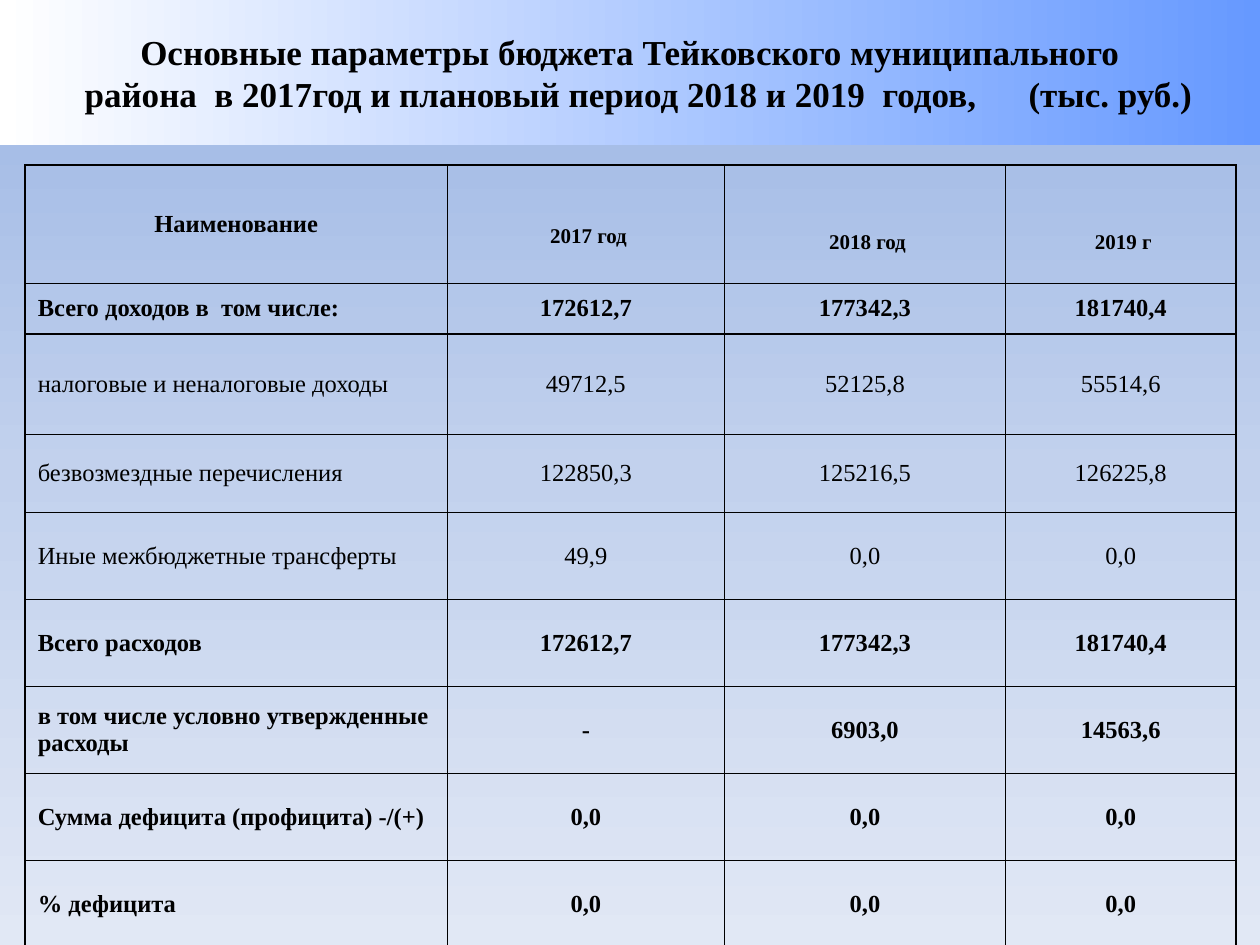
from dataclasses import dataclass

from lxml.etree import SubElement
from pptx import Presentation
from pptx.dml.color import RGBColor
from pptx.enum.shapes import MSO_SHAPE
from pptx.enum.text import MSO_ANCHOR, PP_ALIGN
from pptx.oxml import parse_xml
from pptx.oxml.ns import nsdecls, qn
from pptx.util import Inches, Pt


@dataclass(frozen=True)
class Theme:
    font: str = "Times New Roman"
    ink: str = "000000"
    page: tuple = ((0, "9AB5E4"), (50, "C2D1ED"), (100, "E1E8F5"))
    banner: tuple = ((0, "FFFFFF"), (100, "6699FF"))
    title: int = 20
    body: int = 14
    year: int = 12
    border: int = 1


THEME = Theme()
WIDTH, HEIGHT = 10, 7.5

TITLE = ("Основные параметры бюджета Тейковского муниципального",
         "района  в 2017год и плановый период 2018 и 2019  годов,      (тыс. руб.)")

# Table grid, in inches
COLUMNS = (3.35, 2.2, 2.23, 1.83)
ROW_HEIGHTS = (0.94, 0.4, 0.8, 0.62) + (0.69,) * 5

HEADER = ("Наименование", " 2017 год", " 2018 год", " 2019 г")
# Each row: bold or not, then its cells
ROWS = (
    (True, "Всего доходов в  том числе:", "172612,7", "177342,3", "181740,4"),
    (False, "налоговые и неналоговые доходы", "49712,5", "52125,8", "55514,6"),
    (False, "безвозмездные перечисления", "122850,3", "125216,5", "126225,8"),
    (False, "Иные межбюджетные трансферты", "49,9", "0,0", "0,0"),
    (True, "Всего расходов", "172612,7", "177342,3", "181740,4"),
    (True, "в том числе условно утвержденные расходы", "-", "6903,0", "14563,6"),
    (True, "Сумма дефицита (профицита) -/(+)", "0,0", "0,0", "0,0"),
    (True, "% дефицита", "0,0", "0,0", "0,0"),
)


def set_gradient(fill, root, stops, angle):
    fill.gradient()
    fill.gradient_angle = angle
    gs_lst = root.find(".//" + qn("a:gsLst"))
    for gs in list(gs_lst):
        gs_lst.remove(gs)
    for pos, color in stops:
        gs = SubElement(gs_lst, qn("a:gs"), pos=str(pos * 1000))
        SubElement(gs, qn("a:srgbClr"), val=color)


def style_paragraph(p, size, bold=True, align=PP_ALIGN.CENTER):
    p.alignment = align
    for r in p.runs:
        r.font.name = THEME.font
        r.font.size = Pt(size)
        r.font.bold = bold
        r.font.color.rgb = RGBColor.from_string(THEME.ink)


def add_banner(s):
    sp = s.shapes.add_shape(MSO_SHAPE.RECTANGLE, 0, 0, Inches(WIDTH), Inches(1.15))
    sp.shadow.inherit = False
    sp.line.fill.background()
    set_gradient(sp.fill, sp._element, THEME.banner, 0)
    tf = sp.text_frame
    tf.word_wrap = True
    tf.vertical_anchor = MSO_ANCHOR.MIDDLE
    tf.text = "\n".join(TITLE)
    for p in tf.paragraphs:
        style_paragraph(p, THEME.title)
    # The second line sits slightly right of centre
    tf.paragraphs[1]._p.get_or_add_pPr().set("marL", str(Inches(0.14)))


def set_borders(cell):
    tc_pr = cell._tc.get_or_add_tcPr()
    for i, side in enumerate("LRTB"):
        tc_pr.insert(i, parse_xml(
            f'<a:ln{side} {nsdecls("a")} w="{Pt(THEME.border)}"><a:solidFill>'
            f'<a:srgbClr val="{THEME.ink}"/></a:solidFill></a:ln{side}>'))


def fill_cell(cell, text, size, bold, align=PP_ALIGN.CENTER):
    cell.text = text
    cell.vertical_anchor = MSO_ANCHOR.MIDDLE
    cell.fill.background()
    set_borders(cell)
    style_paragraph(cell.text_frame.paragraphs[0], size, bold, align)


def add_budget_table(s):
    table = s.shapes.add_table(
        len(ROW_HEIGHTS), len(COLUMNS), Inches(0.2), Inches(1.31),
        Inches(sum(COLUMNS)), Inches(sum(ROW_HEIGHTS))).table
    table.first_row = table.horz_banding = False
    for column, width in zip(table.columns, COLUMNS):
        column.width = Inches(width)
    for row, height in zip(table.rows, ROW_HEIGHTS):
        row.height = Inches(height)

    # Header: the years stand below the middle
    for j, text in enumerate(HEADER):
        fill_cell(table.cell(0, j), text, THEME.year if j else THEME.body, True)
    table.cell(0, 1).margin_top = Inches(0.25)
    for j in (2, 3):
        table.cell(0, j).vertical_anchor = MSO_ANCHOR.BOTTOM
        table.cell(0, j).margin_bottom = Inches(0.23)

    # Budget lines: names to the left, amounts centred
    for i, (bold, *texts) in enumerate(ROWS, start=1):
        for j, text in enumerate(texts):
            align = PP_ALIGN.CENTER if j else PP_ALIGN.LEFT
            fill_cell(table.cell(i, j), text, THEME.body, bold, align)


def main():
    prs = Presentation()
    prs.slide_width, prs.slide_height = Inches(WIDTH), Inches(HEIGHT)
    s = prs.slides.add_slide(prs.slide_layouts[6])
    set_gradient(s.background.fill, s._element, THEME.page, 270)
    add_banner(s)
    add_budget_table(s)
    prs.save("out.pptx")


if __name__ == "__main__":
    main()
